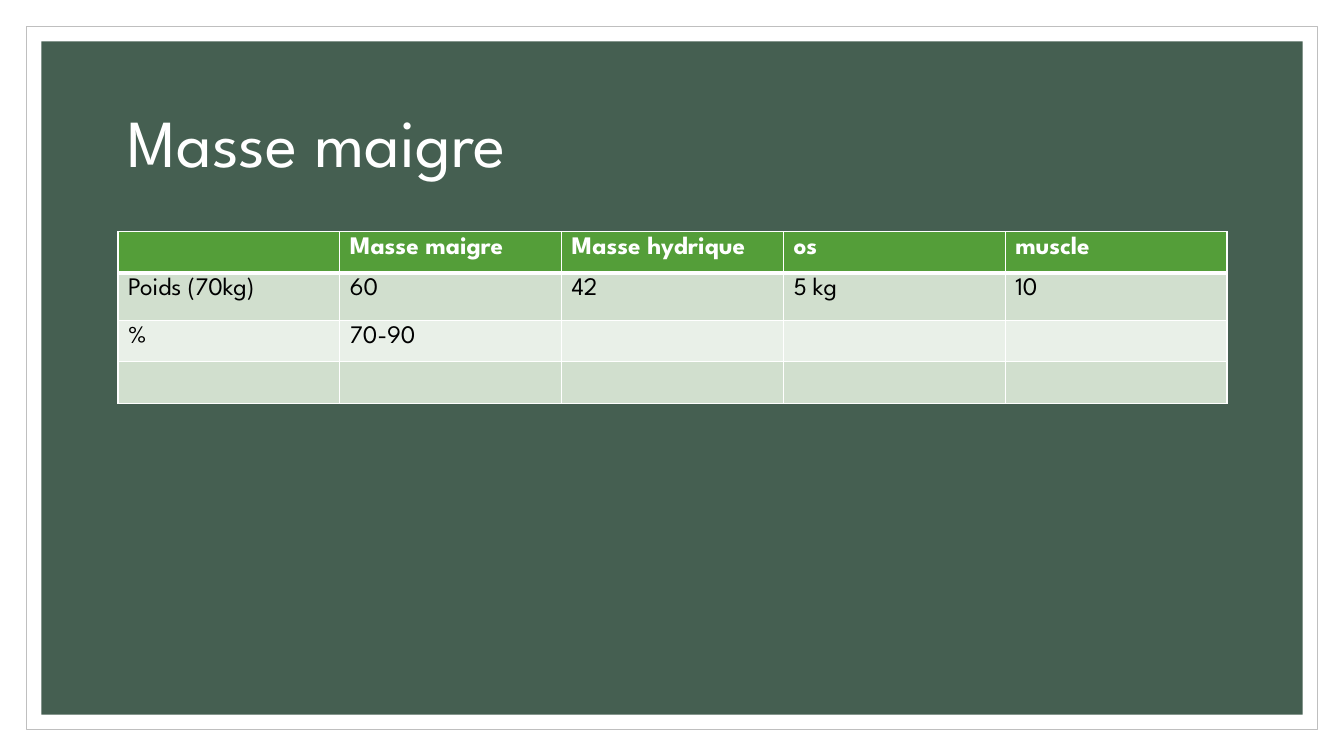
"""Build the "Masse maigre" slide with its body composition table."""
from dataclasses import dataclass

from lxml.etree import SubElement
from pptx import Presentation
from pptx.dml.color import RGBColor
from pptx.enum.shapes import MSO_SHAPE
from pptx.enum.text import MSO_ANCHOR
from pptx.oxml.ns import qn
from pptx.util import Inches, Pt

WHITE = RGBColor(0xFF, 0xFF, 0xFF)
BLACK = RGBColor(0x00, 0x00, 0x00)
GREY = RGBColor(0xBF, 0xBF, 0xBF)
DARK_GREEN = RGBColor(0x45, 0x5F, 0x51)
GREEN = RGBColor(0x54, 0x9E, 0x39)
BAND = RGBColor(0xD1, 0xDF, 0xCE)
LIGHT_BAND = RGBColor(0xE9, 0xF0, 0xE8)
FONT = "League Spartan"
LEFT, WIDTH = 1.17, 11


@dataclass
class Frame:
    inset: float
    fill: RGBColor
    line: RGBColor | None = None


@dataclass
class Row:
    height: float
    fill: RGBColor
    texts: tuple[str, ...] = ()
    color: RGBColor = BLACK
    bold: bool = False
    top: float = 1
    bottom: float = 1


FRAMES = [Frame(0.26, WHITE, GREY), Frame(0.41, DARK_GREEN)]
ROWS = [
    Row(0.41, GREEN, ("", "Masse maigre", "Masse hydrique", "os", "muscle"),
        WHITE, bold=True, bottom=3),
    Row(0.47, BAND, ("Poids (70kg)", "60", "42", "5 kg", "10"), top=3),
    Row(0.41, LIGHT_BAND, ("%", "70-90")),
    Row(0.41, BAND),
]
COLUMNS = 5


def add_run(p, text: str, size: float, color: RGBColor, bold: bool = False) -> None:
    r = p.add_run()
    r.text = text
    for name, value in {"name": FONT, "size": Pt(size), "bold": bold}.items():
        setattr(r.font, name, value)
    r.font.color.rgb = color


def add_frame(s, frame: Frame, width: float, height: float) -> None:
    sp = s.shapes.add_shape(
        MSO_SHAPE.RECTANGLE, Inches(frame.inset), Inches(frame.inset),
        Inches(width - 2 * frame.inset), Inches(height - 2 * frame.inset))
    sp.shadow.inherit = False
    sp.fill.solid()
    sp.fill.fore_color.rgb = frame.fill
    if frame.line is None:
        sp.line.fill.background()
    else:
        sp.line.color.rgb = frame.line
        sp.line.width = Pt(0.5)


def add_title(s, text: str) -> None:
    tf = s.shapes.add_textbox(
        Inches(LEFT), Inches(0.7), Inches(WIDTH), Inches(1.5)).text_frame
    for name, value in {"word_wrap": True, "vertical_anchor": MSO_ANCHOR.MIDDLE}.items():
        setattr(tf, name, value)
    p = tf.paragraphs[0]
    p.line_spacing = 0.9
    add_run(p, text, 48, WHITE)


def add_borders(cell, row: Row) -> None:
    tc_pr = cell._tc.get_or_add_tcPr()
    for side, width in {"L": 1, "R": 1, "T": row.top, "B": row.bottom}.items():
        ln = SubElement(tc_pr, qn(f"a:ln{side}"), w=str(Pt(width)))
        SubElement(SubElement(ln, qn("a:solidFill")), qn("a:srgbClr"), val=str(WHITE))


def add_mass_table(s, rows: list[Row]) -> None:
    table = s.shapes.add_table(
        len(rows), COLUMNS, Inches(LEFT), Inches(2.3), Inches(WIDTH),
        Inches(sum(row.height for row in rows))).table
    for column in table.columns:
        column.width = Inches(WIDTH / COLUMNS)
    for i, row in enumerate(rows):
        table.rows[i].height = Inches(row.height)
        for cell in table.rows[i].cells:
            add_borders(cell, row)
            cell.fill.solid()
            cell.fill.fore_color.rgb = row.fill
        for j, text in enumerate(row.texts):
            if text:
                add_run(table.cell(i, j).text_frame.paragraphs[0],
                        text, 18, row.color, row.bold)


def main() -> None:
    prs = Presentation()
    width, height = 13.33, 7.5
    prs.slide_width, prs.slide_height = Inches(width), Inches(height)
    s = prs.slides.add_slide(prs.slide_layouts[6])
    for frame in FRAMES:
        add_frame(s, frame, width, height)
    add_title(s, "Masse maigre")
    add_mass_table(s, ROWS)
    prs.save("out.pptx")


if __name__ == "__main__":
    main()
